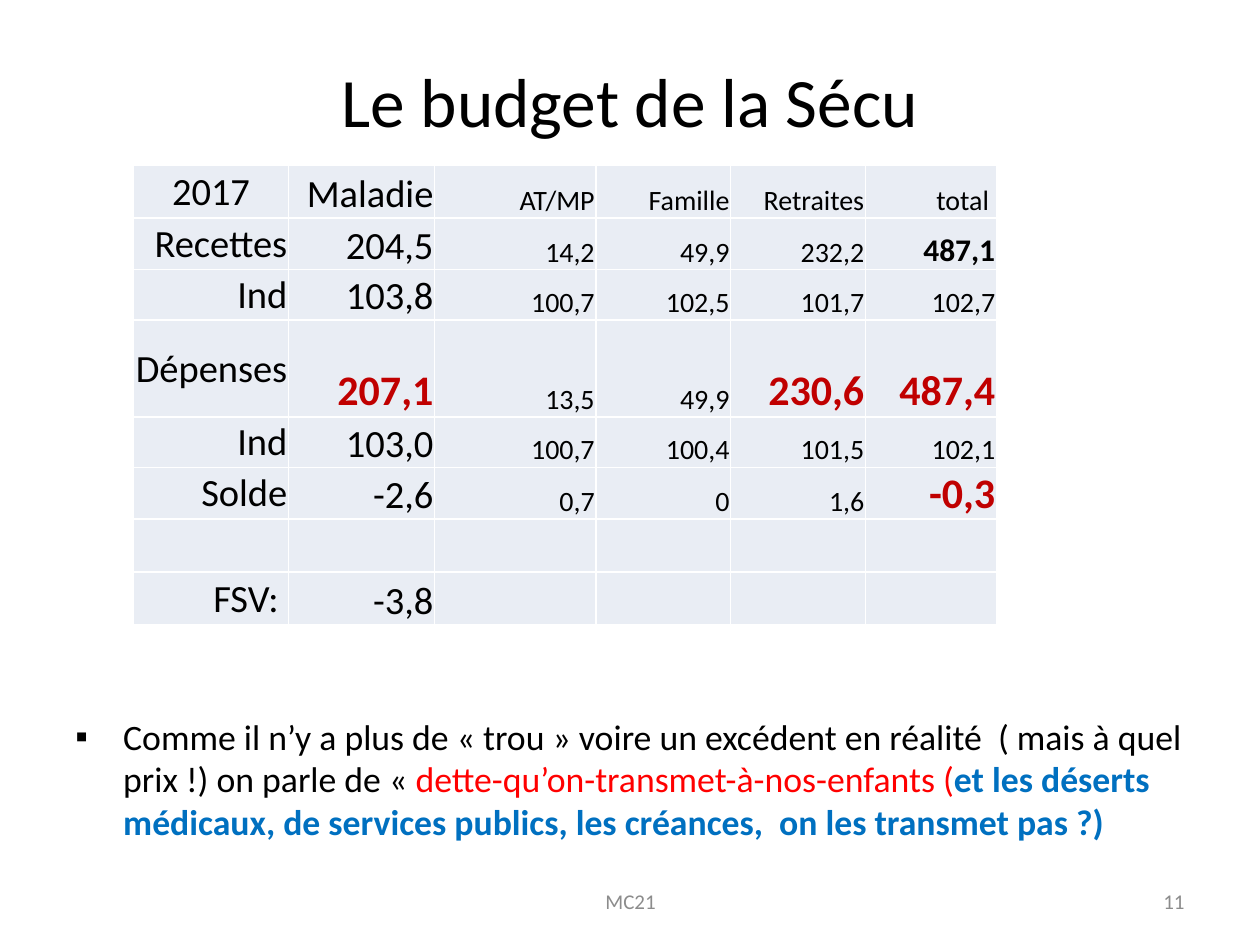
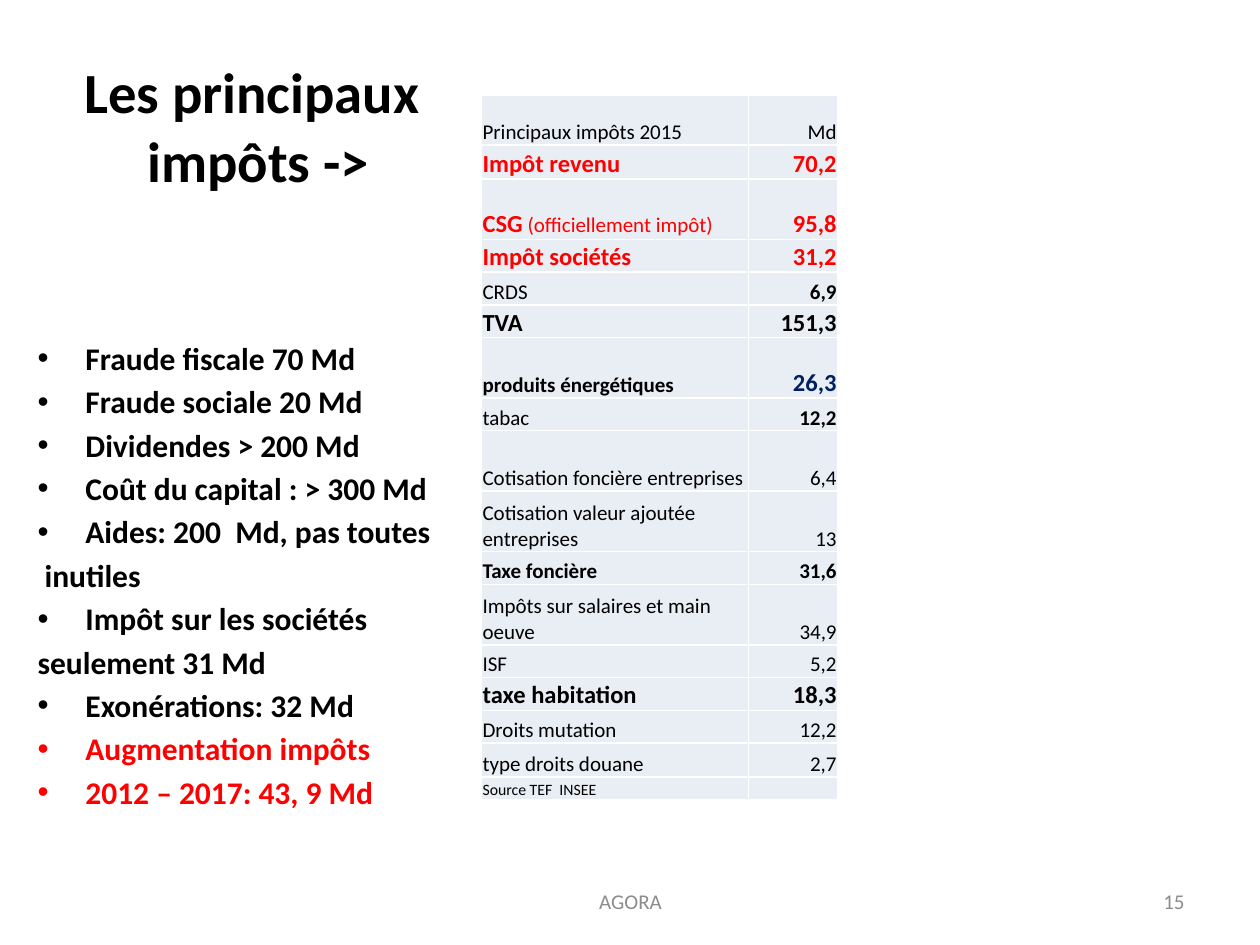
from dataclasses import dataclass
from typing import Optional, Sequence, Union

from lxml import etree
from pptx import Presentation
from pptx import util as u
from pptx.dml.color import RGBColor
from pptx.enum import text
from pptx.oxml import ns


@dataclass(frozen=True)
class Theme:
    font: str = "Calibri"
    ink: str = "000000"
    muted: str = "8C8C8C"
    red: str = "FF0000"
    dark_red: str = "C00000"
    blue: str = "0070C0"
    navy: str = "002060"
    cell: str = "E9EDF4"
    rule: str = "FFFFFF"
    title: float = 39.6
    side_title: float = 32.4
    remark: float = 20.4
    bullet: float = 18
    footer: float = 12
    budget_main: float = 22
    budget_minor: float = 16
    budget_total: float = 18
    budget_alert: float = 24
    tax: float = 12
    tax_strong: float = 14
    source: float = 9


THEME = Theme()
LEFT, CENTER, RIGHT = text.PP_ALIGN.LEFT, text.PP_ALIGN.CENTER, text.PP_ALIGN.RIGHT
MIDDLE, BOTTOM = text.MSO_ANCHOR.MIDDLE, text.MSO_ANCHOR.BOTTOM


@dataclass(frozen=True)
class Span:
    text: str
    size: float
    color: str = THEME.ink
    bold: bool = False


@dataclass(frozen=True)
class Frame:
    left: float
    top: float
    width: float
    height: float

    def lengths(self) -> list:
        return [u.Inches(n) for n in (self.left, self.top, self.width, self.height)]


@dataclass(frozen=True)
class Cell:
    spans: Sequence[Span]
    align: int = RIGHT
    anchor: int = BOTTOM


@dataclass(frozen=True)
class Line:
    spans: Sequence[Span]
    bullet: Optional[str] = None


FOOTER = Frame(3.42, 6.95, 3.17, 0.4)
NUMBER = Frame(7.17, 6.95, 2.33, 0.4)


def add_span(para, span: Span) -> None:
    run = para.add_run()
    run.text = span.text
    run.font.name = THEME.font
    run.font.size = u.Pt(span.size)
    run.font.bold = span.bold
    run.font.color.rgb = RGBColor.from_string(span.color)


def add_page(deck, title_lines: Sequence[Span], frame: Frame, footer: str, number: str):
    page = deck.slides.add_slide(deck.slide_layouts[5])
    title = page.shapes.title
    title.left, title.top, title.width, title.height = frame.lengths()
    title.text_frame.auto_size = text.MSO_AUTO_SIZE.NONE
    title.text_frame.vertical_anchor = MIDDLE
    para = title.text_frame.paragraphs[0]
    para.alignment = CENTER
    for index, span in enumerate(title_lines):
        if index:
            para.add_line_break()
        add_span(para, span)
    for words, place, align in ((footer, FOOTER, CENTER), (number, NUMBER, RIGHT)):
        span = Span(words, THEME.footer, THEME.muted)
        add_text(page, place, [Line([span])], align, MIDDLE)
    return page


def add_text(page, frame: Frame, lines: Sequence[Line], align: int = LEFT,
             anchor: int = text.MSO_ANCHOR.TOP, gap: float = 0) -> None:
    box = page.shapes.add_textbox(*frame.lengths())
    body = box.text_frame
    body.word_wrap = True
    body.vertical_anchor = anchor
    for index, line in enumerate(lines):
        para = body.add_paragraph() if index else body.paragraphs[0]
        para.alignment = align
        para.space_before = u.Pt(gap)
        if line.bullet:
            set_bullet(para, line.bullet)
        for span in line.spans:
            add_span(para, span)


def set_bullet(para, mark: str) -> None:
    props = para._p.get_or_add_pPr()
    indent = u.Inches(0.38)
    props.set("marL", str(indent))
    props.set("indent", str(-indent))
    etree.SubElement(props, ns.qn("a:buFont"), typeface="Arial")
    etree.SubElement(props, ns.qn("a:buChar"), char=mark)


def set_borders(cell) -> None:
    props = cell._tc.get_or_add_tcPr()
    for side in ("lnL", "lnR", "lnT", "lnB"):
        line = etree.SubElement(props, ns.qn(f"a:{side}"), w=str(u.Pt(1)))
        fill = etree.SubElement(line, ns.qn("a:solidFill"))
        etree.SubElement(fill, ns.qn("a:srgbClr"), val=THEME.rule)


def add_grid(page, frame: Frame, widths: Sequence[float], heights: Sequence[float],
             rows: Sequence[Sequence[Cell]]) -> None:
    table = page.shapes.add_table(len(heights), len(widths), *frame.lengths()).table
    table.first_row = table.horz_banding = False
    for column, width in zip(table.columns, widths):
        column.width = u.Inches(width)
    for row, height, contents in zip(table.rows, heights, rows):
        row.height = u.Inches(height)
        for cell, content in zip(row.cells, contents):
            set_borders(cell)
            cell.fill.solid()
            cell.fill.fore_color.rgb = RGBColor.from_string(THEME.cell)
            cell.margin_left = cell.margin_right = cell.margin_top = u.Inches(0.01)
            cell.margin_bottom = 0
            cell.vertical_anchor = content.anchor
            para = cell.text_frame.paragraphs[0]
            para.alignment = content.align
            for span in content.spans:
                add_span(para, span)
            if not content.spans:
                size = str(int(THEME.source * 100))
                etree.SubElement(para._p, ns.qn("a:endParaRPr"), sz=size)


def alert(words: str) -> Span:
    return Span(words, THEME.budget_alert, THEME.dark_red, True)


def strong(words: str, color: str = THEME.ink) -> Span:
    return Span(words, THEME.tax_strong, color, True)


def plain(words: str, bold: bool = False) -> Span:
    return Span(words, THEME.tax, bold=bold)


BUDGET: Sequence[Sequence[Union[str, Span]]] = (
    ("2017", "Maladie", "AT/MP", "Famille", "Retraites", "total "),
    ("Recettes", "204,5", "14,2", "49,9", "232,2",
     Span("487,1", THEME.budget_total, bold=True)),
    ("Ind", "103,8", "100,7", "102,5", "101,7", "102,7"),
    ("Dépenses", alert("207,1"), "13,5", "49,9", alert("230,6"), alert("487,4")),
    ("Ind", "103,0", "100,7", "100,4", "101,5", "102,1"),
    ("Solde", "-2,6", "0,7", "0", "1,6", alert("-0,3")),
    ("",) * 6,
    ("FSV: ", "-3,8", "", "", "", ""),
)

TAXES = (
    (0.39, [plain("Principaux impôts 2015")], plain("Md")),
    (0.27, [strong("Impôt revenu", THEME.red)], strong("70,2", THEME.red)),
    (0.48, [strong("CSG", THEME.red),
            Span(" (officiellement impôt)", THEME.tax, THEME.red)],
     strong("95,8", THEME.red)),
    (0.26, [strong("Impôt sociétés", THEME.red)], strong("31,2", THEME.red)),
    (0.26, [plain("CRDS")], plain("6,9", True)),
    (0.26, [strong("TVA")], strong("151,3")),
    (0.48, [plain("produits énergétiques", True)], strong("26,3", THEME.navy)),
    (0.26, [plain("tabac")], plain("12,2", True)),
    (0.48, [plain("Cotisation foncière entreprises")], plain("6,4")),
    (0.48, [plain("Cotisation valeur ajoutée entreprises")], plain("13")),
    (0.26, [plain("Taxe foncière", True)], plain("31,6", True)),
    (0.48, [plain("Impôts sur salaires et main oeuve")], plain("34,9")),
    (0.26, [plain("ISF")], plain("5,2")),
    (0.26, [strong("taxe habitation")], strong("18,3")),
    (0.26, [plain("Droits mutation")], plain("12,2")),
    (0.27, [plain("type droits douane")], plain("2,7")),
    (0.18, [Span("Source TEF  INSEE", THEME.source)], None),
)

FACTS = (
    ("Fraude fiscale 70 Md", "•", THEME.ink),
    ("Fraude sociale 20 Md", "•", THEME.ink),
    ("Dividendes > 200 Md", "•", THEME.ink),
    ("Coût du capital : > 300 Md", "•", THEME.ink),
    ("Aides: 200  Md, pas toutes", "•", THEME.ink),
    (" inutiles", None, THEME.ink),
    ("Impôt sur les sociétés", "•", THEME.ink),
    ("seulement 31 Md", None, THEME.ink),
    ("Exonérations: 32 Md", "•", THEME.ink),
    ("Augmentation impôts", "•", THEME.red),
    ("2012 – 2017: 43, 9 Md", "•", THEME.red),
)


def budget_cell(entry: Union[str, Span], row: int, column: int) -> Cell:
    if isinstance(entry, str):
        size = THEME.budget_main if column < 2 else THEME.budget_minor
        spans = [Span(entry, size)] if entry else []
    else:
        spans = [entry]
    return Cell(spans, CENTER if row == column == 0 else RIGHT,
                BOTTOM if column else MIDDLE)


def build_budget(deck) -> None:
    page = add_page(deck, [Span("Le budget de la Sécu", THEME.title)],
                    Frame(0.5, 0.44, 9, 0.71), "MC21", "11")
    remark = [
        Span("Comme il n’y a plus de « trou » voire un excédent en réalité  "
             "( mais à quel prix !) on parle de « ", THEME.remark),
        Span("dette-qu’on-transmet-à-nos-enfants (", THEME.remark, THEME.red),
        Span("et les déserts médicaux, de services publics, les créances,  "
             "on les transmet pas ?)", THEME.remark, THEME.blue, True),
    ]
    add_text(page, Frame(0.5, 5.62, 9, 1.15), [Line(remark, "▪")])
    rows = [[budget_cell(entry, row, column) for column, entry in enumerate(entries)]
            for row, entries in enumerate(BUDGET)]
    add_grid(page, Frame(1.06, 1.31, 6.85, 3.63),
             (1.23, 1.16, 1.28, 1.07, 1.07, 1.04),
             (0.42, 0.41, 0.4, 0.77, 0.4, 0.41, 0.42, 0.42), rows)


def build_taxes(deck) -> None:
    title = [Span(words, THEME.side_title, bold=True)
             for words in ("Les principaux", " impôts ->")]
    page = add_page(deck, title, Frame(0.5, 0.6, 3, 0.79), "AGORA", "15")
    lines = [Line([Span(words, THEME.bullet, color, True)], mark)
             for words, mark, color in FACTS]
    add_text(page, Frame(0.2, 2.64, 3.6, 4), lines, gap=3.2)
    rows = [(Cell(label, LEFT), Cell([amount] if amount else []))
            for _, label, amount in TAXES]
    add_grid(page, Frame(3.82, 0.76, 2.82, 5.58), (2.12, 0.71),
             [height for height, _, _ in TAXES], rows)


def main() -> None:
    deck = Presentation()
    deck.slide_width, deck.slide_height = u.Inches(10), u.Inches(7.5)
    build_budget(deck)
    build_taxes(deck)
    deck.save("out.pptx")


if __name__ == "__main__":
    main()
